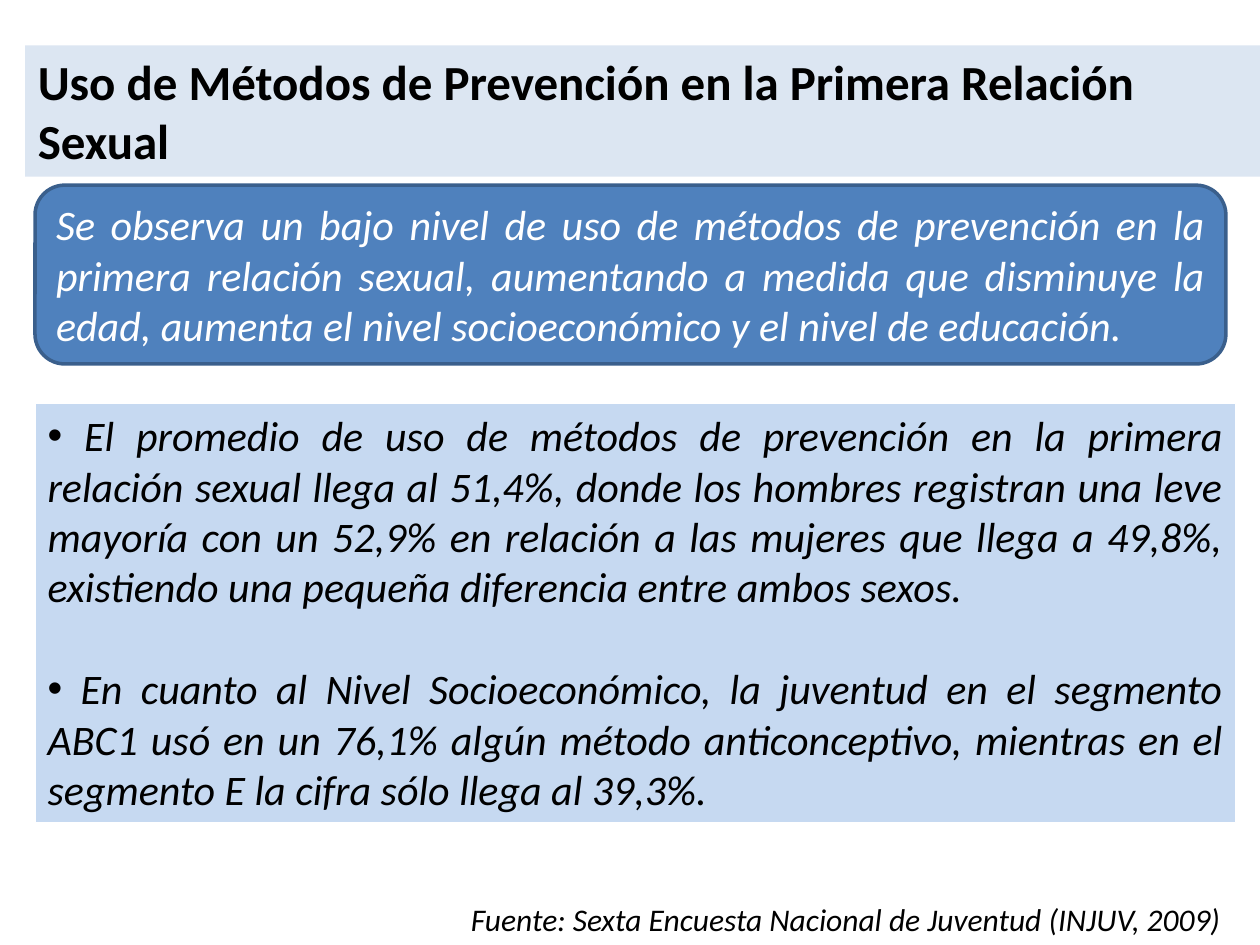
"""Build the slide on prevention methods used in the first sexual relationship."""
from pptx import Presentation
from pptx import util as u
from pptx.dml.color import RGBColor
from pptx.enum import shapes, text
from pptx.oxml.ns import qn
from lxml import etree

TITLE = "Uso de Métodos de Prevención en la Primera Relación Sexual"
SUMMARY = (
    "Se observa un bajo nivel de uso de métodos de prevención en la primera "
    "relación sexual, aumentando a medida que disminuye la edad, aumenta el "
    "nivel socioeconómico y el nivel de educación."
)
FINDINGS = [
    " El promedio de uso de métodos de prevención en la primera relación sexual "
    "llega al 51,4%, donde los hombres registran una leve mayoría con un 52,9% en "
    "relación a las mujeres que llega a 49,8%, existiendo una pequeña diferencia "
    "entre ambos sexos.",
    " En cuanto al Nivel Socioeconómico, la juventud en el segmento ABC1 usó en un "
    "76,1% algún método anticonceptivo, mientras en el segmento E la cifra sólo "
    "llega al 39,3%.",
]
SOURCE = "Fuente: Sexta Encuesta Nacional de Juventud (INJUV, 2009)"

THEME = {
    "font": "Calibri",
    "title_size": 28, "body_size": 24, "source_size": 18,
    "ink": "000000", "paper": "FFFFFF",
    "title_fill": "DCE6F2", "summary_fill": "4F81BD",
    "summary_line": "3A5F8C", "findings_fill": "C6D9F1",
}
SLIDE = (720, 540)
AREAS = {
    "title": (14.4, 26, 705.6, 75),
    "summary": (20, 105.8, 680.5, 102.2),
    "findings": (20, 230.5, 686, 239.5),
    "source": (262, 511, 458, 29),
}
FINDING_GAP = 29.3


def place(box, area):
    box.left, box.top, box.width, box.height = map(u.Pt, AREAS[area])


def paint(box, fill, line=None, width=0.75):
    box.fill.solid()
    box.fill.fore_color.rgb = RGBColor.from_string(THEME[fill])
    if line:
        box.line.color.rgb = RGBColor.from_string(THEME[line])
        box.line.width = u.Pt(width)


def write(box, lines, size, align, color="ink", bold=False, italic=True,
          anchor=text.MSO_ANCHOR.TOP):
    frame = box.text_frame
    frame.text = "\n".join(lines)
    frame.word_wrap = True
    frame.auto_size = text.MSO_AUTO_SIZE.NONE
    frame.vertical_anchor = anchor
    for para in frame.paragraphs:
        para.alignment = align
        para.space_before = u.Pt(0)
        for span in para.runs:
            font = span.font
            font.name, font.size = THEME["font"], u.Pt(THEME[size])
            font.bold, font.italic = bold, italic
            font.color.rgb = RGBColor.from_string(THEME[color])


def add_bullet(para):
    props = para._p.get_or_add_pPr()
    props.set("marL", "0")
    props.set("indent", "0")
    etree.SubElement(props, qn("a:buFont"), typeface="Arial")
    etree.SubElement(props, qn("a:buChar"), char="•")


def main():
    deck = Presentation()
    deck.slide_width, deck.slide_height = map(u.Pt, SLIDE)
    page = deck.slides.add_slide(deck.slide_layouts[1])
    left, justify = text.PP_ALIGN.LEFT, text.PP_ALIGN.JUSTIFY

    title = page.shapes.title
    place(title, "title")
    paint(title, "title_fill")
    write(title, [TITLE], "title_size", left, bold=True, italic=False)

    summary = page.shapes.add_shape(
        shapes.MSO_SHAPE.ROUNDED_RECTANGLE, *map(u.Pt, AREAS["summary"]))
    summary.shadow.inherit = False
    paint(summary, "summary_fill", "summary_line", 2)
    write(summary, [SUMMARY], "body_size", justify, color="paper",
          anchor=text.MSO_ANCHOR.MIDDLE)

    source = page.shapes.add_textbox(*map(u.Pt, AREAS["source"]))
    write(source, [SOURCE], "source_size", left)

    findings = page.placeholders[1]
    place(findings, "findings")
    paint(findings, "findings_fill", "paper")
    write(findings, FINDINGS, "body_size", justify)
    for index, para in enumerate(findings.text_frame.paragraphs):
        para.space_before = u.Pt(FINDING_GAP if index else 0)
        add_bullet(para)

    deck.save("out.pptx")


if __name__ == "__main__":
    main()
